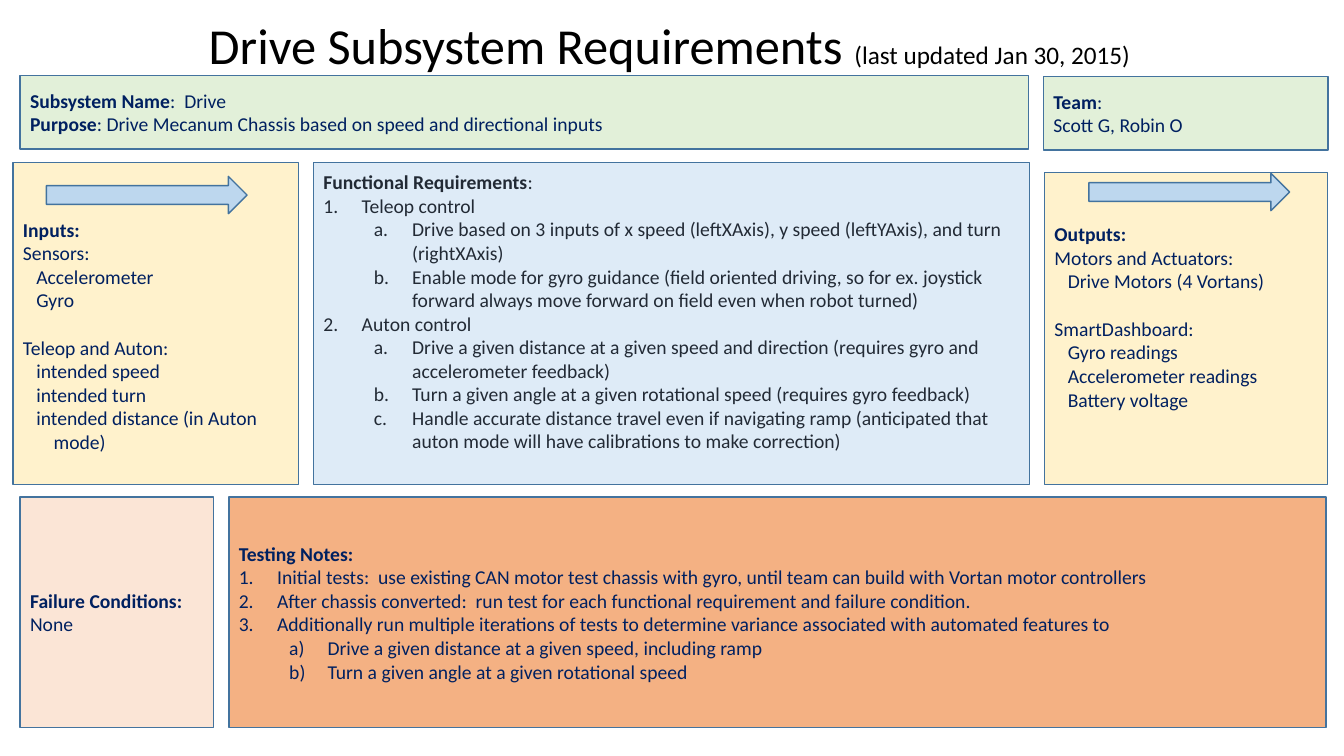
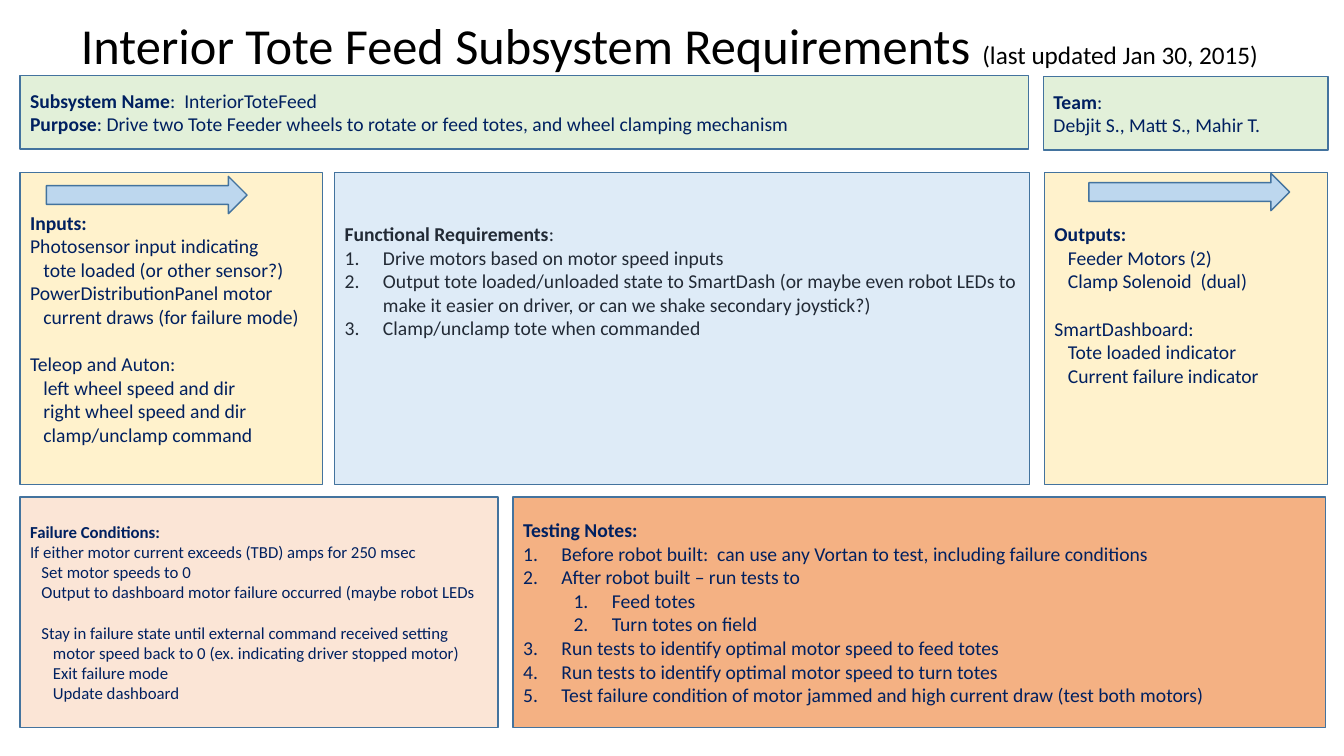
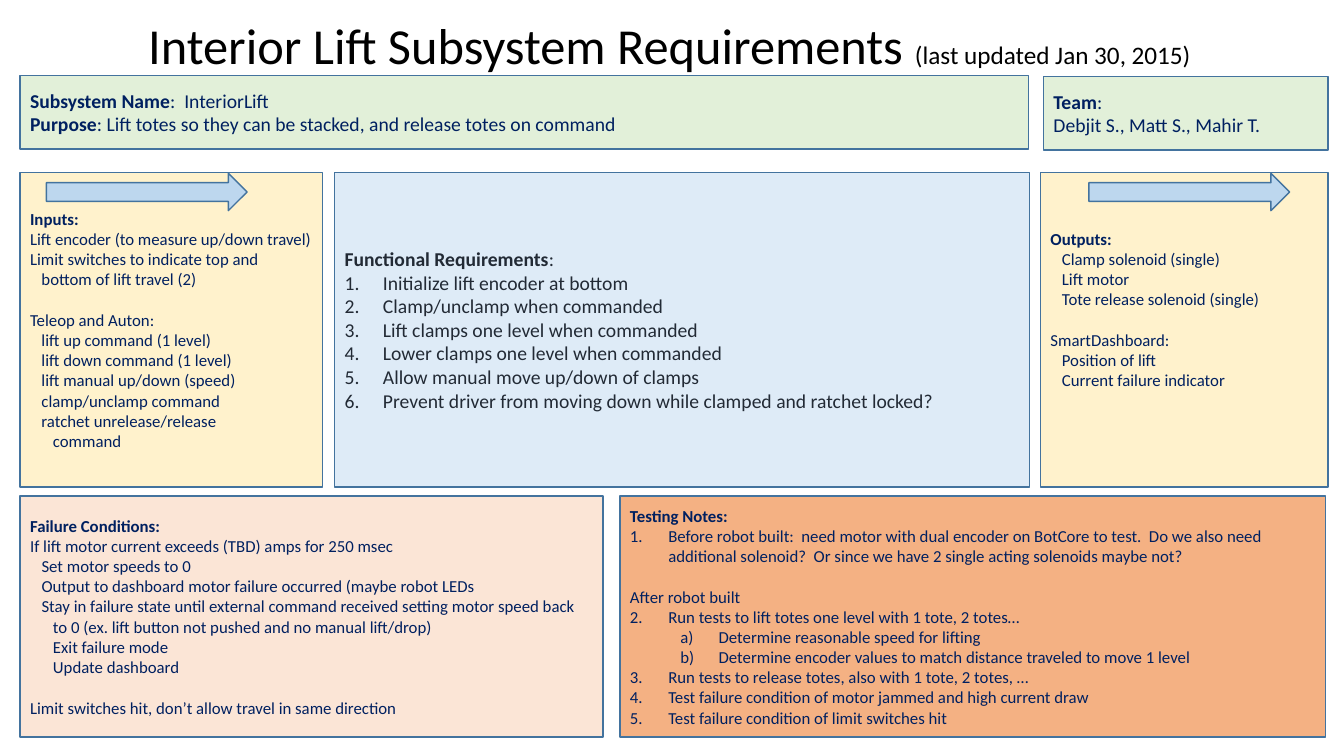
from dataclasses import dataclass

from lxml import etree
from pptx import Presentation
from pptx import util as u
from pptx.dml import color
from pptx.enum import shapes, text
from pptx.oxml import ns

FONT = "Calibri"
EDGE = "43739E"
NAVY = "002060"
SLATE = "222A35"
ARROW = "BDD7EE"
DATED = "(last updated Jan 30, 2015)"

# Panel kind: fill, text colour
LOOK = {
    "head": ("E2F0D9", NAVY),
    "flow": ("FFF2CC", NAVY),
    "func": ("DEEBF7", SLATE),
    "fail": ("FBE5D6", NAVY),
    "test": ("F4B183", NAVY),
}

# List mark: numbering scheme, level, left indent
MARKS = {
    "1.": ("arabicPeriod", 0, 0.38),
    "1.1": ("arabicPeriod", 1, 0.88),
    "a.": ("alphaLcPeriod", 1, 0.88),
    "a)": ("alphaLcParenR", 1, 0.88),
}
HANG = 0.38
LINE = 1.22  # line height as a share of the text size
STEP = 0.68  # one indent step as a share of the text size


@dataclass
class Row:
    """One paragraph; text before a "|" is bold."""
    words: str
    mark: str = ""
    pad: float = 0  # indent steps
    gap: int = 0  # open lines above
    start: int = 1


@dataclass
class Panel:
    kind: str
    box: tuple[float, float, float, float]
    rows: list[Row]
    size: int = 14
    lead: int = 0  # open lines at the top
    tail: int = 0  # open lines at the bottom


@dataclass
class Page:
    title: str
    name: str
    goal: str
    team: str
    panels: list[Panel]
    rise: float = 1.75  # top of the input arrow


def num(words: str, start: int = 1) -> Row:
    return Row(words, "1.", start=start)


def step(words: str, pad: float = 1, gap: int = 0) -> Row:
    return Row(words, pad=pad, gap=gap)


def tint(code: str) -> color.RGBColor:
    return color.RGBColor.from_string(code)


def put(item, **values) -> None:
    for key, value in values.items():
        setattr(item, key, value)


def add_run(para, words: str, size: int, ink: str, bold: bool = False) -> None:
    run = para.add_run()
    run.text = words
    put(run.font, name=FONT, size=u.Pt(size), bold=bold)
    run.font.color.rgb = tint(ink)


def add_shape(slide, form, box: tuple, fill: str):
    shape = slide.shapes.add_shape(form, *map(u.Inches, box))
    shape.shadow.inherit = False
    shape.fill.solid()
    shape.fill.fore_color.rgb = tint(fill)
    shape.line.color.rgb = tint(EDGE)
    shape.line.width = u.Pt(1)
    return shape


def add_row(para, row: Row, size: int, ink: str) -> None:
    para.alignment = text.PP_ALIGN.LEFT
    if row.gap:
        para.space_before = u.Pt(row.gap * size * LINE)
    props = para._p.get_or_add_pPr()
    if row.mark:
        scheme, level, left = MARKS[row.mark]
        para.level = level
        props.set("marL", str(u.Inches(left)))
        props.set("indent", str(-u.Inches(HANG)))
        bullet = etree.SubElement(props, ns.qn("a:buAutoNum"), type=scheme)
        if row.start > 1:
            bullet.set("startAt", str(row.start))
    elif row.pad:
        props.set("marL", str(u.Pt(row.pad * size * STEP)))
    bold, bar, rest = row.words.rpartition("|")
    if bar:
        add_run(para, bold, size, ink, True)
    if rest:
        add_run(para, rest, size, ink)


def add_panel(slide, panel: Panel) -> None:
    fill, ink = LOOK[panel.kind]
    frame = add_shape(slide, shapes.MSO_SHAPE.RECTANGLE, panel.box, fill).text_frame
    line = panel.size * LINE
    put(frame, word_wrap=True, vertical_anchor=text.MSO_ANCHOR.MIDDLE,
        margin_top=u.Pt(3.6 + panel.lead * line),
        margin_bottom=u.Pt(3.6 + panel.tail * line))
    for i, row in enumerate(panel.rows):
        para = frame.add_paragraph() if i else frame.paragraphs[0]
        add_row(para, row, panel.size, ink)


def add_title(slide, words: str) -> None:
    title = slide.shapes.title
    put(title, left=u.Inches(0.66), top=u.Inches(0.14),
        width=u.Inches(11.96), height=u.Inches(0.67))
    frame = title.text_frame
    put(frame, word_wrap=True, auto_size=text.MSO_AUTO_SIZE.NONE,
        vertical_anchor=text.MSO_ANCHOR.MIDDLE)
    para = frame.paragraphs[0]
    put(para, alignment=text.PP_ALIGN.CENTER, line_spacing=0.9)
    add_run(para, words + " ", 36, "000000")
    add_run(para, DATED, 18, "000000")


def add_page(deck, page: Page) -> None:
    slide = deck.slides.add_slide(deck.slide_layouts[5])
    add_title(slide, page.title)
    # Header band
    heads = [
        Panel("head", (0.2, 0.75, 10, 0.73), [
            Row(f"Subsystem Name|:  {page.name}"), Row(f"Purpose|: {page.goal}")]),
        Panel("head", (10.35, 0.76, 2.82, 0.73), [Row("Team|:"), Row(page.team)]),
    ]
    for panel in heads + page.panels:
        add_panel(slide, panel)
    # Input and output arrows
    for left, top in ((0.46, page.rise), (10.8, 1.72)):
        add_shape(slide, shapes.MSO_SHAPE.RIGHT_ARROW, (left, top, 1.99, 0.37), ARROW)


DRIVE = Page(
    "Drive Subsystem Requirements", "Drive",
    "Drive Mecanum Chassis based on speed and directional inputs",
    "Scott G, Robin O",
    [
        Panel("func", (3.11, 1.61, 7.1, 3.2), [
            Row("Functional Requirements|:"),
            num("Teleop control"),
            Row("Drive based on 3 inputs of x speed (leftXAxis), y speed (leftYAxis), "
                "and turn (rightXAxis)", "a."),
            Row("Enable mode for gyro guidance (field oriented driving, so for ex. joystick "
                "forward always move forward on field even when robot turned)", "a."),
            num("Auton control"),
            Row("Drive a given distance at a given speed and direction (requires gyro and "
                "accelerometer feedback)", "a."),
            Row("Turn a given angle at a given rotational speed (requires gyro feedback)", "a."),
            Row("Handle accurate distance travel even if navigating ramp (anticipated that "
                "auton mode will have calibrations to make correction)", "a."),
        ], tail=1),
        Panel("fail", (0.2, 4.93, 1.92, 2.29), [Row("Failure Conditions:|"), Row("None")]),
        Panel("flow", (0.13, 1.61, 2.83, 3.2), [
            Row("Inputs:|"),
            Row("Sensors:"),
            step("Accelerometer"),
            step("Gyro"),
            Row("Teleop and Auton:", gap=1),
            step("intended speed"),
            step("intended turn"),
            step("intended distance (in Auton"),
            step("mode)", 2.3),
        ], lead=1),
        Panel("flow", (10.36, 1.71, 2.81, 3.1), [
            Row("Outputs:|"),
            Row("Motors and Actuators:"),
            step("Drive Motors (4 Vortans)"),
            Row("SmartDashboard:", gap=1),
            step("Gyro readings"),
            step("Accelerometer readings"),
            step("Battery voltage"),
        ], lead=1, tail=2),
        Panel("test", (2.27, 4.93, 10.88, 2.29), [
            Row("Testing Notes:|"),
            num("Initial tests:  use existing CAN motor test chassis with gyro, until team "
                "can build with Vortan motor controllers"),
            num("After chassis converted:  run test for each functional requirement and "
                "failure condition."),
            num("Additionally run multiple iterations of tests to determine variance "
                "associated with automated features to"),
            Row("Drive a given distance at a given speed, including ramp", "a)"),
            Row("Turn a given angle at a given rotational speed", "a)"),
        ]),
    ],
)

FEED = Page(
    "Interior Tote Feed Subsystem Requirements", "InteriorToteFeed",
    "Drive two Tote Feeder wheels to rotate or feed totes, and wheel clamping mechanism",
    "Debjit S., Matt S., Mahir T.",
    [
        Panel("func", (3.32, 1.71, 6.89, 3.1), [
            Row("Functional Requirements|:"),
            num("Drive motors based on motor speed inputs"),
            num("Output tote loaded/unloaded state to SmartDash (or maybe even robot LEDs to "
                "make it easier on driver, or can we shake secondary joystick?)"),
            num("Clamp/unclamp tote when commanded"),
        ], tail=4),
        Panel("fail", (0.2, 4.93, 4.74, 2.29), [
            Row("Failure Conditions:|"),
            Row("If either motor current exceeds (TBD) amps for 250 msec"),
            step("Set motor speeds to 0"),
            step("Output to dashboard motor failure occurred (maybe robot LEDs"),
            step("Stay in failure state until external command received setting", gap=1),
            step("motor speed back to 0 (ex. indicating driver stopped motor)", 2),
            step("Exit failure mode", 2),
            step("Update dashboard", 2),
        ], size=12),
        Panel("flow", (0.2, 1.71, 3, 3.1), [
            Row("Inputs:|"),
            Row("Photosensor input indicating"),
            step("tote loaded (or other sensor?)"),
            Row("PowerDistributionPanel motor"),
            step("current draws (for failure mode)"),
            Row("Teleop and Auton:", gap=1),
            step("left wheel speed and dir"),
            step("right wheel speed and dir"),
            step("clamp/unclamp command"),
        ]),
        Panel("flow", (10.36, 1.71, 2.81, 3.1), [
            Row("Outputs:|"),
            step("Feeder Motors (2)"),
            step("Clamp Solenoid  (dual)"),
            Row("SmartDashboard:", gap=1),
            step("Tote loaded indicator"),
            step("Current failure indicator"),
        ], lead=1, tail=3),
        Panel("test", (5.09, 4.93, 8.06, 2.29), [
            Row("Testing Notes:|"),
            num("Before robot built:  can use any Vortan to test, including failure conditions"),
            num("After robot built – run tests to"),
            Row("Feed totes", "1.1"),
            Row("Turn totes on field", "1.1"),
            num("Run tests to identify optimal motor speed to feed totes"),
            num("Run tests to identify optimal motor speed to turn totes"),
            num("Test failure condition of motor jammed and high current draw "
                "(test both motors)"),
        ]),
    ],
)

LIFT = Page(
    "Interior Lift Subsystem Requirements", "InteriorLift",
    "Lift totes so they can be stacked, and release totes on command",
    "Debjit S., Matt S., Mahir T.",
    [
        Panel("func", (3.32, 1.71, 6.89, 3.12), [
            Row("Functional Requirements|:"),
            num("Initialize lift encoder at bottom"),
            num("Clamp/unclamp when commanded"),
            num("Lift clamps one level when commanded"),
            num("Lower clamps one level when commanded"),
            num("Allow manual move up/down of clamps"),
            num("Prevent driver from moving down while clamped and ratchet locked?"),
        ]),
        Panel("fail", (0.2, 4.92, 5.78, 2.39), [
            Row("Failure Conditions:|"),
            Row("If lift motor current exceeds (TBD) amps for 250 msec"),
            step("Set motor speeds to 0"),
            step("Output to dashboard motor failure occurred (maybe robot LEDs"),
            step("Stay in failure state until external command received setting motor "
                 "speed back"),
            step("to 0 (ex. lift button not pushed and no manual lift/drop)", 2),
            step("Exit failure mode", 2),
            step("Update dashboard", 2),
            Row("Limit switches hit, don’t allow travel in same direction", gap=1),
        ], size=12),
        Panel("flow", (0.2, 1.71, 3, 3.12), [
            Row("Inputs:|"),
            Row("Lift encoder (to measure up/down travel)"),
            Row("Limit switches to indicate top and"),
            step("bottom of lift travel (2)"),
            Row("Teleop and Auton:", gap=1),
            step("lift up command (1 level)"),
            step("lift down command (1 level)"),
            step("lift manual up/down (speed)"),
            step("clamp/unclamp command"),
            step("ratchet unrelease/release"),
            step("command", 2),
        ], size=12),
        Panel("flow", (10.32, 1.71, 2.85, 3.12), [
            Row("Outputs:|"),
            step("Clamp solenoid (single)"),
            step("Lift motor"),
            step("Tote release solenoid (single)"),
            Row("SmartDashboard:", gap=1),
            step("Position of lift"),
            step("Current failure indicator"),
        ], size=12, lead=1, tail=3),
        Panel("test", (6.15, 4.92, 7, 2.39), [
            Row("Testing Notes:|"),
            num("Before robot built:  need motor with dual encoder on BotCore to test.  Do we "
                "also need additional solenoid?  Or since we have 2 single acting solenoids "
                "maybe not?"),
            Row("After robot built", gap=1),
            num("Run tests to lift totes one level with 1 tote, 2 totes…", 2),
            Row("Determine reasonable speed for lifting", "a)"),
            Row("Determine encoder values to match distance traveled to move 1 level", "a)"),
            num("Run tests to release totes, also with 1 tote, 2 totes, …", 2),
            num("Test failure condition of motor jammed and high current draw", 2),
            num("Test failure condition of limit switches hit", 2),
        ], size=12),
    ],
    rise=1.72,
)


def main() -> None:
    deck = Presentation()
    put(deck, slide_width=u.Inches(13.33), slide_height=u.Inches(7.5))
    for page in (DRIVE, FEED, LIFT):
        add_page(deck, page)
    deck.save("out.pptx")


if __name__ == "__main__":
    main()
